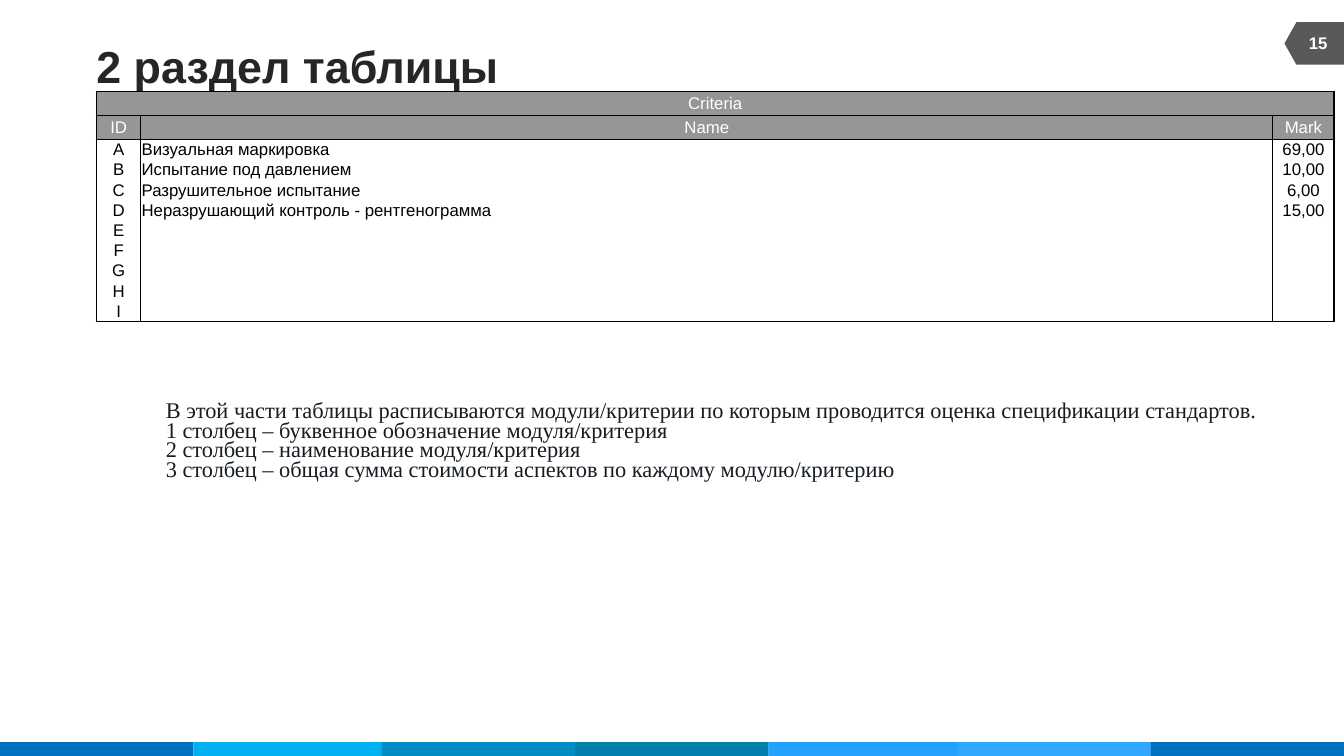
from dataclasses import dataclass

from lxml import etree
from pptx import Presentation, util as u
from pptx.dml.color import RGBColor
from pptx.enum import shapes, text
from pptx.oxml import ns


@dataclass(frozen=True)
class Theme:
    """Colours, fonts and type sizes of the slide."""
    sans: str = "Arial"
    serif: str = "Times New Roman"
    title_size: int = 32
    note_size: int = 16
    small_size: int = 12
    title: str = "262626"
    note: str = "151C22"
    black: str = "000000"
    white: str = "FFFFFF"
    header: str = "969696"
    badge: str = "595959"
    strip: tuple = ("0070C0", "00B0F0", "008DC3", "007EAE", "23A1FF", "2FA6FF", "0070C0")


THEME = Theme()
ALIGN = text.PP_ALIGN
ANCHOR = text.MSO_ANCHOR
COLUMN_WIDTHS = (1.12, 5.56, 1.12, 1.19, 7.45, 1.14, 6.69, 2.21, 1.6, 1.57, 1.54)
CRITERIA = {
    "A": ("Визуальная маркировка", "69,00"),
    "B": ("Испытание под давлением", "10,00"),
    "C": ("Разрушительное испытание", "6,00"),
    "D": ("Неразрушающий контроль - рентгенограмма", "15,00"),
}
NOTES = (
    "В этой части таблицы расписываются модули/критерии по которым проводится оценка спецификации стандартов.",
    "1 столбец – буквенное обозначение модуля/критерия",
    "2 столбец – наименование модуля/критерия",
    "3 столбец – общая сумма стоимости аспектов по каждому модулю/критерию",
)


def write_text(paragraph, words, *, size=THEME.small_size, font=THEME.sans,
               color=THEME.black, bold=False, align=ALIGN.LEFT):
    """Write formatted words into a paragraph, keeping the font when empty."""
    paragraph.alignment = align
    if not words:
        ending = paragraph._p.get_or_add_endParaRPr()
        ending.set("sz", str(size * 100))
        etree.SubElement(ending, ns.qn("a:latin"), typeface=font)
        return
    run = paragraph.add_run()
    run.text = words
    run.font.size = u.Pt(size)
    run.font.name = font
    run.font.bold = bold
    run.font.color.rgb = RGBColor.from_string(color)


def add_box(slide, left, top, width, height, *, wrap=True, anchor=ANCHOR.TOP, inset=None):
    """Add a text box and return its text frame."""
    frame = slide.shapes.add_textbox(u.Cm(left), u.Cm(top), u.Cm(width), u.Cm(height)).text_frame
    frame.word_wrap = wrap
    frame.vertical_anchor = anchor
    if inset is not None:
        frame.margin_left = frame.margin_right = u.Cm(inset)
        frame.margin_top = frame.margin_bottom = u.Cm(inset)
    return frame


def add_filled(slide, kind, left, top, width, height, color):
    """Add a plain filled shape without outline or shadow."""
    shape = slide.shapes.add_shape(kind, u.Cm(left), u.Cm(top), u.Cm(width), u.Cm(height))
    shape.shadow.inherit = False
    shape.fill.solid()
    shape.fill.fore_color.rgb = RGBColor.from_string(color)
    shape.line.fill.background()
    return shape


def add_strip(slide, left, top, width, height):
    """Add the coloured strip, where every third part overlaps the one before."""
    overlap = 0.13
    part = (width + 2 * overlap) / len(THEME.strip)
    for index, color in enumerate(THEME.strip):
        offset = index * part - overlap * ((index + 1) // 3)
        add_filled(slide, shapes.MSO_SHAPE.RECTANGLE, left + offset, top, part, height, color)


def add_page_badge(slide, left, top, width, height, number):
    """Add the page number on its arrow-shaped badge."""
    shift = (width - height) / 2
    badge = add_filled(slide, shapes.MSO_SHAPE.FLOWCHART_OFFPAGE_CONNECTOR,
                       left + shift, top - shift, height, width, THEME.badge)
    badge.rotation = 90
    frame = add_box(slide, left + 0.14, top, width - 0.08, height - 0.04, anchor=ANCHOR.MIDDLE)
    write_text(frame.paragraphs[0], number, color=THEME.white, bold=True, align=ALIGN.CENTER)


def add_title(slide, left, top, width, height, words):
    """Add the slide title."""
    frame = add_box(slide, left, top, width, height, wrap=False, anchor=ANCHOR.MIDDLE, inset=0)
    write_text(frame.paragraphs[0], words, size=THEME.title_size, color=THEME.title, bold=True)


def set_borders(cell, visible):
    """Draw the named sides of a cell and hide the others."""
    properties = cell._tc.get_or_add_tcPr()
    for position, side in enumerate("LRTB"):
        line = etree.Element(ns.qn(f"a:ln{side}"), w=str(u.Pt(1)))
        if side in visible:
            fill = etree.SubElement(line, ns.qn("a:solidFill"))
            etree.SubElement(fill, ns.qn("a:srgbClr"), val=THEME.black)
        else:
            etree.SubElement(line, ns.qn("a:noFill"))
        properties.insert(position, line)


def fill_cell(cell, words, *, header, sides, align):
    """Fill one table cell with its text, background and borders."""
    cell.margin_left = cell.margin_right = u.Cm(0.02)
    cell.margin_top = cell.margin_bottom = 0
    cell.vertical_anchor = ANCHOR.MIDDLE
    if header:
        cell.fill.solid()
        cell.fill.fore_color.rgb = RGBColor.from_string(THEME.header)
    else:
        cell.fill.background()
    color = THEME.white if header else THEME.black
    write_text(cell.text_frame.paragraphs[0], words, color=color, align=align)
    set_borders(cell, sides)


def add_criteria_table(slide, left, top):
    """Add the table of criteria with two header rows and an open last row."""
    last = len(COLUMN_WIDTHS) - 1
    rows = [{0: "Criteria"}, {0: "ID", 1: "Name", last: "Mark"}]
    for letter in "ABCDEFGHI":
        name, mark = CRITERIA.get(letter, ("", ""))
        rows.append({0: letter, 1: name, last: mark})
    rows.append({})
    heights = [0.61] * 2 + [0.49] * 9 + [0.82]
    borders = ["LRTB"] * 2 + ["LRT"] + ["LR"] * 7 + ["LRB", "T"]
    table = slide.shapes.add_table(len(rows), len(COLUMN_WIDTHS), u.Cm(left), u.Cm(top),
                                   u.Cm(sum(COLUMN_WIDTHS)), u.Cm(sum(heights))).table
    table.first_row = table.horz_banding = False
    for column, width in zip(table.columns, COLUMN_WIDTHS):
        column.width = u.Cm(width)
    for index, (values, height, sides) in enumerate(zip(rows, heights, borders)):
        header = index < 2
        table.rows[index].height = u.Cm(height)
        for column in range(last + 1):
            align = ALIGN.LEFT if column == 1 and not header else ALIGN.CENTER
            fill_cell(table.cell(index, column), values.get(column, ""),
                      header=header, sides=sides, align=align)
        if index == 0:
            table.cell(index, 0).merge(table.cell(index, last))
        elif values:
            table.cell(index, 1).merge(table.cell(index, last - 1))


def add_notes(slide, left, top, width, height):
    """Add the explanation of the table columns."""
    frame = add_box(slide, left, top, width, height)
    for index, words in enumerate(NOTES):
        paragraph = frame.add_paragraph() if index else frame.paragraphs[0]
        write_text(paragraph, words, size=THEME.note_size, font=THEME.serif,
                   color=THEME.note, align=ALIGN.JUSTIFY)
        paragraph.line_spacing = u.Pt(14)
        properties = paragraph._p.get_or_add_pPr()
        properties.set("marL", "0")
        properties.set("indent", str(u.Cm(1.5)))


def main():
    """Build the slide and save it."""
    presentation = Presentation()
    presentation.slide_width, presentation.slide_height = u.Cm(33.87), u.Cm(19.05)
    slide = presentation.slides.add_slide(presentation.slide_layouts[6])
    margin = 2.43
    add_strip(slide, 0, 18.7, 33.87, 0.35)
    add_page_badge(slide, 32.37, 0.56, 1.5, 1.07, "15")
    add_title(slide, margin, 1, 20.88, 1.32, "2 раздел таблицы")
    add_criteria_table(slide, margin, 2.3)
    add_notes(slide, margin, 10.04, 29.77, 2.26)
    presentation.save("out.pptx")


if __name__ == "__main__":
    main()
